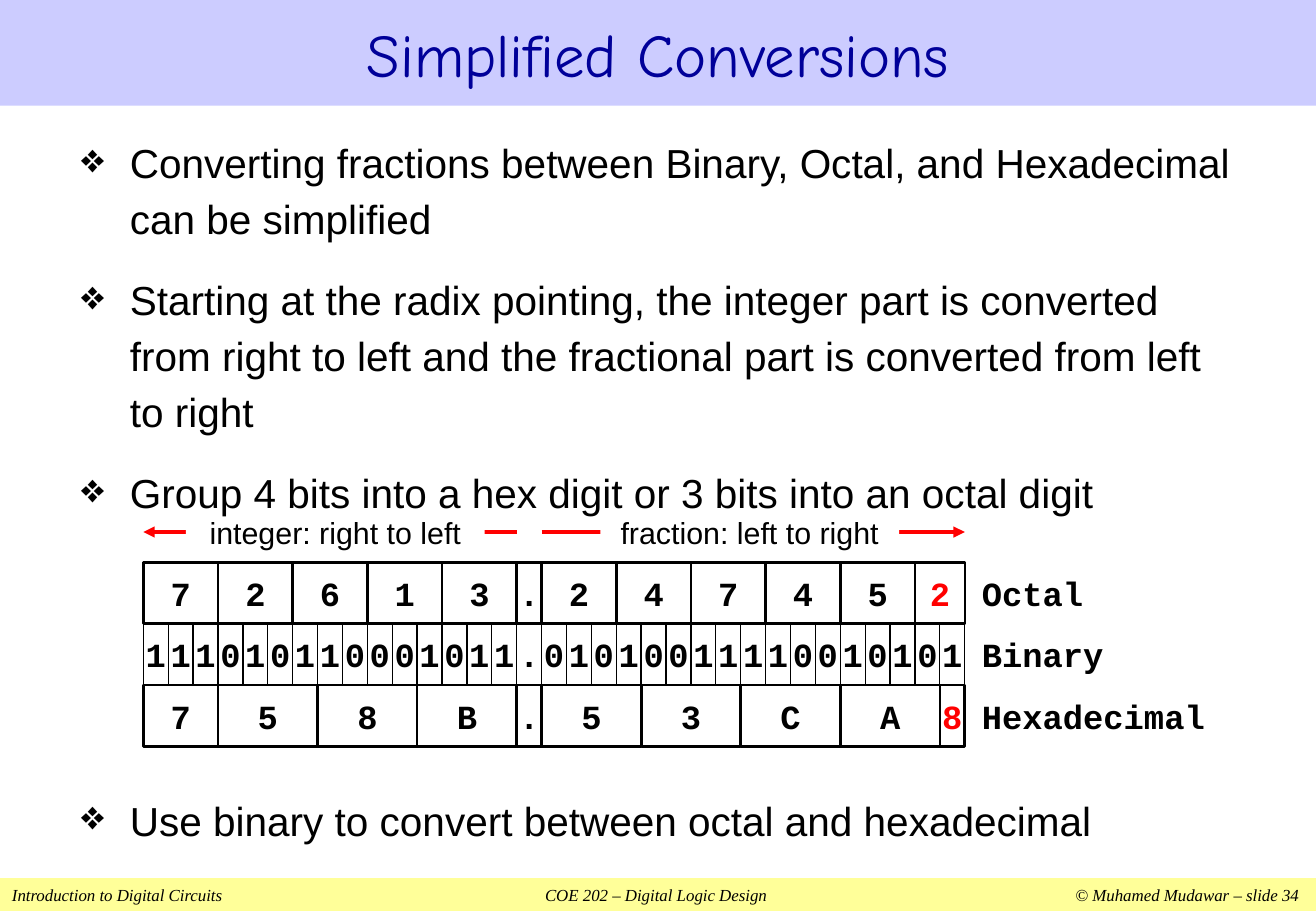
"""Build the slide on simplified conversions between octal, binary and hexadecimal."""
from lxml.etree import SubElement
from pptx import Presentation
from pptx.dml.color import RGBColor
from pptx.enum.shapes import MSO_CONNECTOR, MSO_SHAPE
from pptx.enum.text import MSO_ANCHOR, PP_ALIGN
from pptx.oxml.ns import qn
from pptx.util import Inches, Pt

WIDTH, HEIGHT = 10.83, 7.5
COLORS = {
    "black": "000000", "white": "FFFFFF", "red": "FF0000",
    "navy": "000099", "lavender": "CCCCFF", "yellow": "FFFF99",
}
TITLE = "Simplified Conversions"
FOOTER = ["Introduction to Digital Circuits", "COE 202 – Digital Logic Design",
          "© Muhamed Mudawar – slide 34"]
FOOTER_TABS = [("ctr", 5.3), ("r", 10.59)]
BULLETS = [
    ("Converting fractions between Binary, Octal, and Hexadecimal can be simplified", 15),
    ("Starting at the radix pointing, the integer part is converted from right to left "
     "and the fractional part is converted from left to right", 15),
    ("Group 4 bits into a hex digit or 3 bits into an octal digit", 15),
    ("Use binary to convert between octal and hexadecimal", 161),
]
NUMBER_ROWS = [
    {"name": "Octal", "digits": "72613.247452", "line": 1.5, "last": "red",
     "bits": [3] * 5 + [1] + [3] * 5 + [2]},
    {"name": "Binary", "digits": "111010110001011.01010011110010101", "line": 0.75,
     "last": "black", "bits": [1] * 33},
    {"name": "Hexadecimal", "digits": "758B.53CA8", "line": 1.5, "last": "red",
     "bits": [3, 4, 4, 4, 1, 4, 4, 4, 4, 1]},
]
GRID_LEFT, GRID_TOP, GRID_WIDTH = 1.18, 4.63, 6.76
BIT_WIDTH = GRID_WIDTH / 33
ROW_HEIGHT = 0.505
NAME_LEFT, NAME_WIDTH = 8.08, 2.05
DIRECTIONS = [
    ("integer: right to left", 15, 0, 1.53),
    ("fraction: left to right", 16, 33, 4.94),
]
DIRECTION_Y, DIRECTION_WIDTH, DIRECTION_HEIGHT = 4.38, 2.46, 0.25


def color(name):
    return RGBColor.from_string(COLORS[name])


def add_span(para, text, font, size, ink="black", bold=False, italic=False):
    span = para.add_run()
    span.text = text
    span.font.name = font
    span.font.size = Pt(size)
    span.font.color.rgb = color(ink)
    span.font.bold = bold
    span.font.italic = italic


def add_box(page, left, top, width, height, fill=None, line=None, inset=0.0,
            anchor=MSO_ANCHOR.MIDDLE, align=PP_ALIGN.CENTER):
    box = page.shapes.add_shape(MSO_SHAPE.RECTANGLE, Inches(left), Inches(top),
                                Inches(width), Inches(height))
    box.shadow.inherit = False
    if fill:
        box.fill.solid()
        box.fill.fore_color.rgb = color(fill)
    else:
        box.fill.background()
    if line:
        box.line.color.rgb = color("black")
        box.line.width = Pt(line)
    else:
        box.line.fill.background()
    set_frame(box.text_frame, inset, inset / 2, anchor)
    para = box.text_frame.paragraphs[0]
    para.alignment = align
    return para


def set_frame(frame, side, edge, anchor):
    frame.word_wrap = True
    frame.vertical_anchor = anchor
    frame.margin_left = frame.margin_right = Inches(side)
    frame.margin_top = frame.margin_bottom = Inches(edge)


def add_textbox(page, left, top, width, height, side=0, edge=0, anchor=MSO_ANCHOR.TOP):
    box = page.shapes.add_textbox(Inches(left), Inches(top), Inches(width), Inches(height))
    set_frame(box.text_frame, side, edge, anchor)
    return box.text_frame


def add_bands(page):
    title = add_box(page, 0, 0, WIDTH, 0.87, "lavender", inset=0.1)
    add_span(title, TITLE, "Comic Neue", 36, "navy")
    footer = add_box(page, 0, 7.23, WIDTH, 0.27, "yellow", inset=0.1,
                     anchor=MSO_ANCHOR.TOP, align=PP_ALIGN.LEFT)
    tabs = SubElement(footer._p.get_or_add_pPr(), qn("a:tabLst"))
    for align, place in FOOTER_TABS:
        SubElement(tabs, qn("a:tab"), pos=str(Inches(place)), algn=align)
    add_span(footer, "\t".join(FOOTER), "Times New Roman", 10, italic=True)


def add_bullets(page):
    frame = add_textbox(page, 0.57, 0.93, 9.69, 6.16, 0.1, 0.15)
    for index, (text, space) in enumerate(BULLETS):
        para = frame.add_paragraph() if index else frame.paragraphs[0]
        para.line_spacing = 1.15
        para.space_before = Pt(space)
        properties = para._p.get_or_add_pPr()
        properties.set("marL", str(Inches(0.4)))
        properties.set("indent", str(-Inches(0.4)))
        SubElement(properties, qn("a:buChar"), char="❖")
        add_span(para, text, "Arial", 24)


def add_number_row(page, index, row):
    top = GRID_TOP + index * ROW_HEIGHT
    column = 0
    for place, (digit, bits) in enumerate(zip(row["digits"], row["bits"]), 1):
        cell = add_box(page, GRID_LEFT + column * BIT_WIDTH, top, bits * BIT_WIDTH,
                       ROW_HEIGHT, line=row["line"])
        ink = row["last"] if place == len(row["digits"]) else "black"
        add_span(cell, digit, "Courier New", 20, ink, bold=True)
        column += bits
    frame = add_textbox(page, NAME_LEFT, top, NAME_WIDTH, ROW_HEIGHT,
                        anchor=MSO_ANCHOR.MIDDLE)
    add_span(frame.paragraphs[0], row["name"], "Courier New", 20, bold=True)


def add_direction(page, text, start, end, left):
    begin_x, end_x = (Inches(GRID_LEFT + column * BIT_WIDTH) for column in (start, end))
    level = Inches(DIRECTION_Y)
    arrow = page.shapes.add_connector(MSO_CONNECTOR.STRAIGHT, begin_x, level, end_x, level)
    arrow.line.color.rgb = color("red")
    arrow.line.width = Pt(2.25)
    SubElement(arrow.line._get_or_add_ln(), qn("a:tailEnd"), type="triangle")
    SubElement(arrow._element.spPr, qn("a:effectLst"))
    label = add_box(page, left, DIRECTION_Y - DIRECTION_HEIGHT / 2, DIRECTION_WIDTH,
                    DIRECTION_HEIGHT, "white")
    add_span(label, text, "Arial", 18)


def main():
    deck = Presentation()
    deck.slide_width, deck.slide_height = Inches(WIDTH), Inches(HEIGHT)
    page = deck.slides.add_slide(deck.slide_layouts[6])
    add_bands(page)
    add_bullets(page)
    for index, row in enumerate(NUMBER_ROWS):
        add_number_row(page, index, row)
    for direction in DIRECTIONS:
        add_direction(page, *direction)
    deck.save("out.pptx")


if __name__ == "__main__":
    main()
